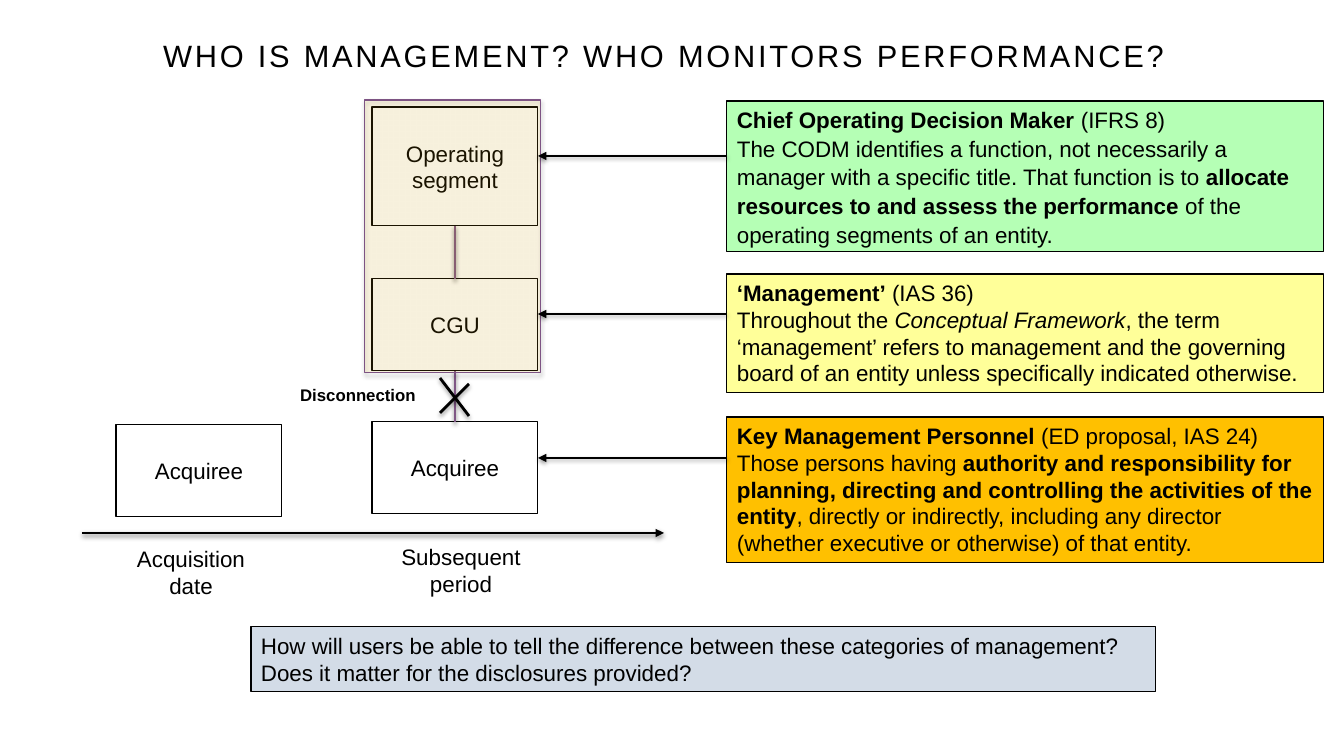
from lxml.etree import SubElement
from pptx import Presentation
from pptx.dml.color import RGBColor
from pptx.enum.shapes import MSO_CONNECTOR as CONN, MSO_SHAPE as SHAPE
from pptx.enum.text import MSO_ANCHOR as ANCHOR, MSO_AUTO_SIZE as FIT, PP_ALIGN as ALIGN
from pptx.oxml.ns import qn
from pptx.util import Emu, Pt

BLACK = RGBColor(0x00, 0x00, 0x00)
GREEN = RGBColor(0xB5, 0xFF, 0xB5)
YELLOW = RGBColor(0xFF, 0xFF, 0x99)
AMBER = RGBColor(0xFF, 0xC0, 0x00)
BLUE_GREY = RGBColor(0xD3, 0xDC, 0xE7)
MAUVE = RGBColor(0x7F, 0x56, 0x85)
PURPLE = RGBColor(0x7D, 0x53, 0x83)

TOP, BOTTOM = 0, 2
BOX_X, BOX_W, BOX_H = 372, 166, 92
CALLOUT_X, CALLOUT_W = 727, 597


def px(n):
    return Emu(round(n * 914400 / 100.8))


def add_shadow(shape, opacity):
    spPr = shape._element.spPr
    effects = spPr.find(qn("a:effectLst"))
    if effects is None:
        effects = SubElement(spPr, qn("a:effectLst"))
    shadow = SubElement(effects, qn("a:outerShdw"), blurRad=str(Pt(3.1)), dist=str(Pt(1.7)),
                        dir="5400000", rotWithShape="0")
    color = SubElement(shadow, qn("a:srgbClr"), val=str(BLACK))
    SubElement(color, qn("a:alpha"), val=str(opacity * 1000))


class Diagram:
    font = "Arial"
    size = 16

    def __init__(self, prs):
        self.s = prs.slides.add_slide(prs.slide_layouts[5])

    def set_text(self, tf, paragraphs, size=None, align=ALIGN.LEFT, anchor=ANCHOR.TOP):
        """Fill a frame; each paragraph is a list of (text, style), style being '', 'b' or 'i'."""
        tf.word_wrap = True
        tf.auto_size = FIT.NONE
        tf.vertical_anchor = anchor
        for i, runs in enumerate(paragraphs):
            p = tf.paragraphs[0] if i == 0 else tf.add_paragraph()
            p.alignment = align
            p.font.name = self.font
            p.font.size = Pt(size or self.size)
            p.font.color.rgb = BLACK
            for text, style in runs:
                r = p.add_run()
                r.text = text
                if style:
                    r.font.bold = style == "b"
                    r.font.italic = style == "i"

    def title(self, text, x, y, w, h):
        sp = self.s.shapes.title
        sp.left, sp.top, sp.width, sp.height = map(px, (x, y, w, h))
        self.set_text(sp.text_frame, [[(text, "")]], 22, ALIGN.CENTER, ANCHOR.BOTTOM)
        p = sp.text_frame.paragraphs[0]
        p.line_spacing = 0.9
        p.runs[0]._r.get_or_add_rPr().set("spc", "200")

    def rect(self, x, y, w, h, fill=None, line=BLACK):
        sp = self.s.shapes.add_shape(SHAPE.RECTANGLE, *map(px, (x, y, w, h)))
        sp.shadow.inherit = False
        if fill is None:
            sp.fill.background()
        else:
            sp.fill.solid()
            sp.fill.fore_color.rgb = fill
        sp.line.color.rgb = line
        sp.line.width = Pt(0.75)
        return sp

    def box(self, text, x, y, h=BOX_H):
        sp = self.rect(x, y, BOX_W, h)
        self.set_text(sp.text_frame, [[(text, "")]], align=ALIGN.CENTER, anchor=ANCHOR.MIDDLE)
        return sp

    def callout(self, paragraphs, x, y, w, h, fill):
        sp = self.rect(x, y, w, h, fill)
        self.set_text(sp.text_frame, paragraphs)
        return sp

    def panel(self, x, y, w, h):
        sp = self.rect(x, y, w, h, AMBER, PURPLE)
        color = sp._element.spPr.find(qn("a:solidFill"))[0]
        SubElement(color, qn("a:alpha"), val="10000")
        add_shadow(sp, 35)

    def label(self, text, x, y, w, h, size=None, style=""):
        sp = self.s.shapes.add_textbox(*map(px, (x, y, w, h)))
        self.set_text(sp.text_frame, [[(text, style)]], size, ALIGN.CENTER)

    def line(self, x1, y1, x2, y2, color=BLACK, width=2, arrow=False):
        c = self.s.shapes.add_connector(CONN.STRAIGHT, *map(px, (x1, y1, x2, y2)))
        c.line.color.rgb = color
        c.line.width = Pt(width)
        if arrow:
            SubElement(c._element.spPr.find(qn("a:ln")), qn("a:tailEnd"), type="triangle")
        add_shadow(c, 38)
        return c

    def link(self, upper, lower):
        c = self.line(0, 0, 0, 0, MAUVE)
        c.begin_connect(upper, BOTTOM)
        c.end_connect(lower, TOP)


def main():
    prs = Presentation()
    prs.slide_width, prs.slide_height = px(1344), px(756)
    d = Diagram(prs)
    d.title("WHO IS MANAGEMENT? WHO MONITORS PERFORMANCE?", 75, 24, 1178, 55)

    d.line(82, 533, 664, 533, arrow=True)
    d.box("Acquiree", 116, 425)
    d.label("Acquisition date", 108, 540, 166, 64)
    d.label("Subsequent period", 372, 538, 178, 64)

    segment = d.box("Operating segment", BOX_X, 107, 119)
    cgu = d.box("CGU", BOX_X, 279)
    acquiree = d.box("Acquiree", BOX_X, 422)
    d.link(segment, cgu)
    d.link(cgu, acquiree)
    d.label("Disconnection", 275, 380, 166, 30, 12, "b")
    d.line(440, 378, 469, 416)
    d.line(469, 384, 440, 413)
    d.panel(365, 100, 176, 273)

    codm = [
        [("Chief Operating Decision Maker ", "b"), ("(IFRS 8)", "")],
        [("The CODM identifies a function, not necessarily a manager with a specific title. "
          "That function is to ", ""),
         ("allocate resources to and assess the performance ", "b"),
         ("of the operating segments of an entity.", "")],
    ]
    management = [
        [("‘Management’", "b"), (" (IAS 36)", "")],
        [("Throughout the ", ""), ("Conceptual Framework", "i"),
         (", the term ‘management’ refers to management and the governing board of an entity "
          "unless specifically indicated otherwise.", "")],
    ]
    personnel = [
        [("Key Management Personnel ", "b"), ("(ED proposal, IAS 24)", "")],
        [("Those persons having ", ""),
         ("authority and responsibility for planning, directing and controlling the activities "
          "of the entity", "b"),
         (", directly or indirectly, including any director (whether executive or otherwise) "
          "of that entity.", "")],
    ]
    callouts = [
        (codm, 101, 151, GREEN, 156),
        (management, 274, 119, YELLOW, 314),
        (personnel, 417, 146, AMBER, 458),
    ]
    for paragraphs, y, h, fill, arrow_y in callouts:
        sp = d.callout(paragraphs, CALLOUT_X, y, CALLOUT_W, h, fill)
        if paragraphs is codm:
            sp.text_frame.paragraphs[1].line_spacing = 1.07
        d.line(CALLOUT_X, arrow_y, BOX_X + BOX_W, arrow_y, width=1.25, arrow=True)

    question = ("How will users be able to tell the difference between these categories of "
                "management? Does it matter for the disclosures provided?")
    d.callout([[(question, "")]], 251, 627, 905, 65, BLUE_GREY)
    prs.save("out.pptx")


if __name__ == "__main__":
    main()
